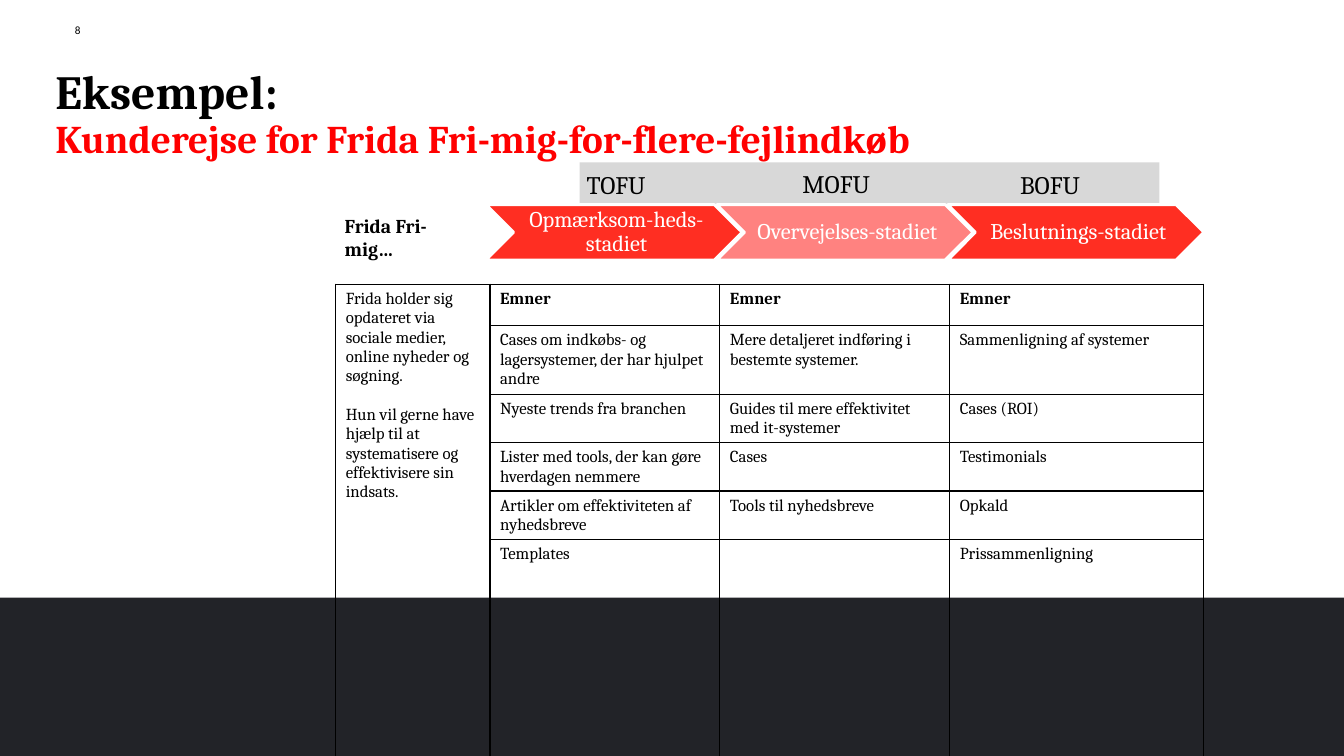
"""Build the customer journey slide for Frida."""
from lxml import etree
from pptx import Presentation
from pptx.dml.color import RGBColor
from pptx.enum.shapes import MSO_SHAPE
from pptx.enum.text import MSO_ANCHOR, PP_ALIGN
from pptx.oxml.ns import qn
from pptx.util import Inches, Pt

RECTANGLE, CHEVRON = MSO_SHAPE.RECTANGLE, MSO_SHAPE.CHEVRON
TOP, MIDDLE, BOTTOM = MSO_ANCHOR.TOP, MSO_ANCHOR.MIDDLE, MSO_ANCHOR.BOTTOM
LEFT, CENTER = PP_ALIGN.LEFT, PP_ALIGN.CENTER

BLACK = RGBColor(0x00, 0x00, 0x00)
WHITE = RGBColor(0xFF, 0xFF, 0xFF)
TITLE_RED = RGBColor(0xFF, 0x00, 0x00)
STAGE_RED = RGBColor(0xFF, 0x2E, 0x22)
STAGE_PINK = RGBColor(0xFF, 0x82, 0x80)
GREY = RGBColor(0xD8, 0xD8, 0xD8)
DARK = RGBColor(0x22, 0x23, 0x28)

SERIF, SANS = "Cambria", "Calibri"
NO_INSETS = (0, 0, 0, 0)
BOX_INSETS = (0.1, 0.05, 0.1, 0.05)
STAGE_INSETS = (0.07, 0.02, 0.02, 0.02)

TITLE = [("Eksempel:", 34, BLACK),
         ("Kunderejse for Frida Fri-mig-for-flere-fejlindkøb", 28, TITLE_RED)]
PERSONA = "Frida Fri-mig…"
FUNNEL_LABELS = [("TOFU", 5.72, 1.63, 0.88), ("MOFU", 7.86, 1.62, 0.97),
                 ("BOFU", 10.02, 1.63, 0.9)]
STAGES = [("Opmærksom-heds-stadiet", STAGE_RED),
          ("Overvejelses-stadiet", STAGE_PINK),
          ("Beslutnings-stadiet", STAGE_RED)]
STORY = [
    "Frida holder sig opdateret via sociale medier, online nyheder og søgning.",
    "Hun vil gerne have hjælp til at systematisere og effektivisere sin indsats.",
]
TOPICS = [
    ("Emner", "Emner", "Emner"),
    ("Cases om indkøbs- og lagersystemer, der har hjulpet andre",
     "Mere detaljeret indføring i bestemte systemer.",
     "Sammenligning af systemer"),
    ("Nyeste trends fra branchen",
     "Guides til mere effektivitet med it-systemer", "Cases (ROI)"),
    ("Lister med tools, der kan gøre hverdagen nemmere", "Cases", "Testimonials"),
    ("Artikler om effektiviteten af nyhedsbreve", "Tools til nyhedsbreve", "Opkald"),
    ("Templates", "", "Prissammenligning"),
]
COLUMN_WIDTHS = (1.53, 2.28, 2.28, 2.52)
ROW_HEIGHT = 0.41
CELL_BOTTOM_MARGIN = 0.03
STAGE_LEFT, STAGE_PITCH = 4.82, 2.29


def set_font(paragraph, size, color=BLACK, bold=False, name=SERIF):
    font = paragraph.font
    font.name, font.size, font.bold = name, Pt(size), bold
    font.color.rgb = color


def set_frame(frame, insets, anchor):
    frame.word_wrap = True
    frame.vertical_anchor = anchor
    (frame.margin_left, frame.margin_top,
     frame.margin_right, frame.margin_bottom) = map(Inches, insets)


def add_text(slide, bounds, lines, insets=BOX_INSETS, anchor=TOP, align=LEFT,
             bold=False, name=SERIF, spacing=None):
    frame = slide.shapes.add_textbox(*map(Inches, bounds)).text_frame
    set_frame(frame, insets, anchor)
    frame.text = "\n".join(text for text, _, _ in lines)
    for paragraph, (_, size, color) in zip(frame.paragraphs, lines):
        paragraph.alignment = align
        paragraph.line_spacing = spacing
        set_font(paragraph, size, color, bold, name)


def add_filled_shape(slide, kind, bounds, color):
    shape = slide.shapes.add_shape(kind, *map(Inches, bounds))
    shape.shadow.inherit = False
    shape.fill.solid()
    shape.fill.fore_color.rgb = color
    shape.line.fill.background()
    return shape


def add_stage(slide, index, text, color):
    left = STAGE_LEFT + index * STAGE_PITCH
    shape = add_filled_shape(slide, CHEVRON, (left, 2.03, 2.54, 0.55), color)
    shape.adjustments[0] = 0.5
    shape.line.color.rgb = WHITE
    shape.line.width = Pt(2)
    set_frame(shape.text_frame, STAGE_INSETS, MIDDLE)
    shape.text_frame.text = text
    paragraph = shape.text_frame.paragraphs[0]
    paragraph.alignment = CENTER
    paragraph.line_spacing = 0.9
    set_font(paragraph, 16, WHITE)


def set_borders(cell):
    properties = cell._tc.get_or_add_tcPr()
    for position, side in enumerate(("lnL", "lnR", "lnT", "lnB")):
        line = etree.Element(qn(f"a:{side}"), w=str(Pt(1)))
        fill = etree.SubElement(line, qn("a:solidFill"))
        etree.SubElement(fill, qn("a:srgbClr"), val=str(BLACK))
        properties.insert(position, line)


def add_topic_table(slide):
    row_count = len(TOPICS)
    bounds = (3.33, 2.82, sum(COLUMN_WIDTHS), ROW_HEIGHT * row_count)
    table = slide.shapes.add_table(
        row_count, len(COLUMN_WIDTHS), *map(Inches, bounds)).table
    table.first_row = table.horz_banding = False
    for column, width in zip(table.columns, COLUMN_WIDTHS):
        column.width = Inches(width)
    for row_index, topics in enumerate(TOPICS):
        table.rows[row_index].height = Inches(ROW_HEIGHT)
        story = "\n".join(STORY) if row_index == 0 else ""
        for column_index, text in enumerate((story, *topics)):
            cell = table.cell(row_index, column_index)
            cell.fill.background()
            cell.margin_bottom = Inches(CELL_BOTTOM_MARGIN)
            set_borders(cell)
            cell.text = text
            for paragraph in cell.text_frame.paragraphs:
                set_font(paragraph, 12, bold=row_index == 0 and column_index > 0)
    story_cell = table.cell(0, 0)
    story_cell.text_frame.paragraphs[1].space_before = Pt(14)
    story_cell.merge(table.cell(row_count - 1, 0))


def main():
    presentation = Presentation()
    presentation.slide_width = Inches(13.33)
    presentation.slide_height = Inches(7.5)
    slide = presentation.slides.add_slide(presentation.slide_layouts[6])

    add_filled_shape(slide, RECTANGLE, (0, 5.93, 13.33, 1.57), DARK)
    add_text(slide, (0.55, 0.58, 12.2, 1.03), TITLE, NO_INSETS, BOTTOM,
             bold=True, spacing=0.9)
    add_text(slide, (0.56, 0.13, 0.42, 0.23), [("8", 8, BLACK)], NO_INSETS,
             BOTTOM, CENTER, name=SANS)
    add_filled_shape(slide, RECTANGLE, (5.75, 1.61, 5.75, 0.78), GREY)
    for index, (text, color) in enumerate(STAGES):
        add_stage(slide, index, text, color)
    add_topic_table(slide)
    add_text(slide, (3.32, 2.07, 1.49, 0.57), [(PERSONA, 14, BLACK)], bold=True)
    for text, left, top, width in FUNNEL_LABELS:
        add_text(slide, (left, top, width, 0.4), [(text, 18, BLACK)])

    presentation.save("out.pptx")


if __name__ == "__main__":
    main()
